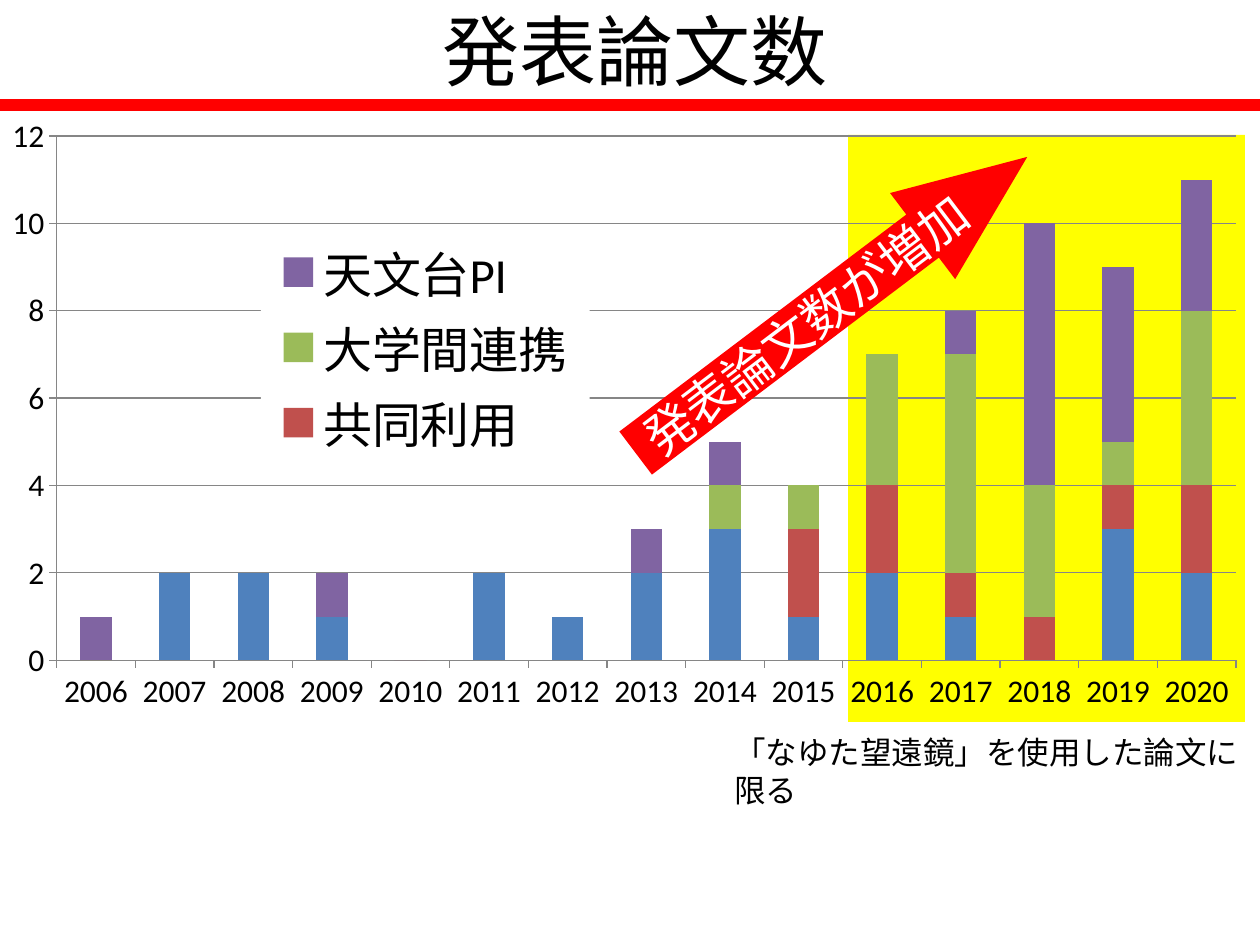
from lxml import etree
from pptx import Presentation
from pptx.chart.data import CategoryChartData
from pptx.dml.color import RGBColor
from pptx.enum.chart import XL_CHART_TYPE as ChartType, XL_LEGEND_POSITION as LegendPosition, XL_TICK_MARK as Tick
from pptx.enum.shapes import MSO_CONNECTOR as Connector, MSO_SHAPE as Shape
from pptx.enum.text import MSO_ANCHOR as Anchor, PP_ALIGN as Align
from pptx.oxml import parse_xml
from pptx.oxml.ns import nsdecls, qn
from pptx.util import Emu, Pt

SCALE = 914400 / 126


def px(*lengths):
    return [Emu(round(length * SCALE)) for length in lengths]


def color(target, value):
    if hasattr(target, "solid"):
        target.solid()
        target = target.fore_color
    target.rgb = RGBColor.from_string(value)


deck = Presentation()
deck.slide_width, deck.slide_height = px(1260, 945)
page = deck.slides.add_slide(deck.slide_layouts[6])

highlight = page.shapes.add_shape(Shape.RECTANGLE, *px(848, 135, 397, 587))
arrow = page.shapes.add_shape(Shape.RIGHT_ARROW, *px(586, 251, 491, 108))
for shape, fill in ((highlight, "FFFF00"), (arrow, "FF0000")):
    shape.shadow.inherit = False
    shape.line.fill.background()
    color(shape.fill, fill)
arrow.rotation = 322.9
arrow.adjustments[0] = 0.5
arrow.adjustments[1] = 1.215

series_rows = [
    ("", "4F81BD", (0, 2, 2, 1, 0, 2, 1, 2, 3, 1, 2, 1, 0, 3, 2)),
    ("共同利用", "C0504D", (0, 0, 0, 0, 0, 0, 0, 0, 0, 2, 2, 1, 1, 1, 2)),
    ("大学間連携", "9BBB59", (0, 0, 0, 0, 0, 0, 0, 0, 1, 1, 3, 5, 3, 1, 4)),
    ("天文台PI", "8064A2", (1, 0, 0, 1, 0, 0, 0, 1, 1, 0, 0, 1, 6, 4, 3)),
]
paper_data = CategoryChartData(number_format="General")
paper_data.categories = [str(year) for year in range(2006, 2021)]
for name, _, values in series_rows:
    paper_data.add_series(name, values)
chart = page.shapes.add_chart(
    ChartType.COLUMN_STACKED, *px(0, 108, 1260, 622), paper_data
).chart
chart.has_title = False
chart.font.name = "Calibri"
chart.font.size = Pt(18)
color(chart.font.color, "000000")
plot = chart.plots[0]
plot.gap_width, plot.overlap = 150, 100
for series, (_, fill, _) in zip(plot.series, series_rows):
    color(series.format.fill, fill)

values_axis, years_axis = chart.value_axis, chart.category_axis
values_axis.minimum_scale, values_axis.maximum_scale = 0, 12
values_axis.major_unit = 2
values_axis.has_major_gridlines = True
for axis in (values_axis, years_axis):
    axis.major_tick_mark = Tick.OUTSIDE
for item in (values_axis, years_axis, values_axis.major_gridlines):
    color(item.format.line.color, "868686")
    item.format.line.width = Pt(0.75)

chart.has_legend = True
legend = chart.legend
legend.position = LegendPosition.RIGHT
legend.include_in_layout = False
legend.font.size = Pt(28)
legend.font.name = "Calibri"
color(legend.font.color, "000000")
legend_xml = legend._element
plot_xml = chart._chartSpace.chart.plotArea
layouts = (
    (plot_xml, 0, '<c:layoutTarget val="inner"/>', (0.045, 0.045, 0.936, 0.843)),
    (legend_xml, 1, "", (0.207, 0.2, 0.261, 0.37)),
)
for parent, index, target, bounds in layouts:
    for old in parent.findall(qn("c:layout")):
        parent.remove(old)
    modes = "".join(f'<c:{side}Mode val="edge"/>' for side in "xy")
    sizes = "".join(f'<c:{side} val="{value}"/>' for side, value in zip("xywh", bounds))
    parent.insert(index, parse_xml(
        f'<c:layout {nsdecls("c")}><c:manualLayout>{target}{modes}{sizes}</c:manualLayout></c:layout>'
    ))
legend_xml.insert(1, parse_xml(
    f'<c:legendEntry {nsdecls("c")}><c:idx val="0"/><c:delete val="1"/></c:legendEntry>'
))
legend_xml.find(qn("c:txPr")).addprevious(parse_xml(
    f'<c:spPr {nsdecls("c", "a")}><a:solidFill><a:srgbClr val="FFFFFF"/></a:solidFill></c:spPr>'
))

rule = page.shapes.add_connector(Connector.STRAIGHT, *px(0, 105, 1260, 105))
color(rule.line.color, "FF0000")
rule.line.width = Pt(7)
etree.SubElement(rule._element.spPr, qn("a:effectLst"))

title = page.shapes.add_textbox(*px(5, -4, 1260, 107))
note = page.shapes.add_textbox(*px(722, 727, 539, 50))
page.shapes._spTree.append(arrow._element)
page.shapes._spTree.append(note._element)

for box, text, size, ink, align, anchor in (
    (title, "発表論文数", 44, "000000", Align.CENTER, Anchor.MIDDLE),
    (arrow, "発表論文数が増加", 28, "FFFFFF", Align.CENTER, Anchor.MIDDLE),
    (note, "「なゆた望遠鏡」を使用した論文に限る", 18, "000000", Align.LEFT, Anchor.TOP),
):
    frame = box.text_frame
    frame.text = text
    frame.word_wrap = True
    frame.vertical_anchor = anchor
    para = frame.paragraphs[0]
    para.alignment = align
    span = para.runs[0]
    span.font.name = "Calibri"
    span.font.size = Pt(size)
    color(span.font.color, ink)

deck.save("out.pptx")
